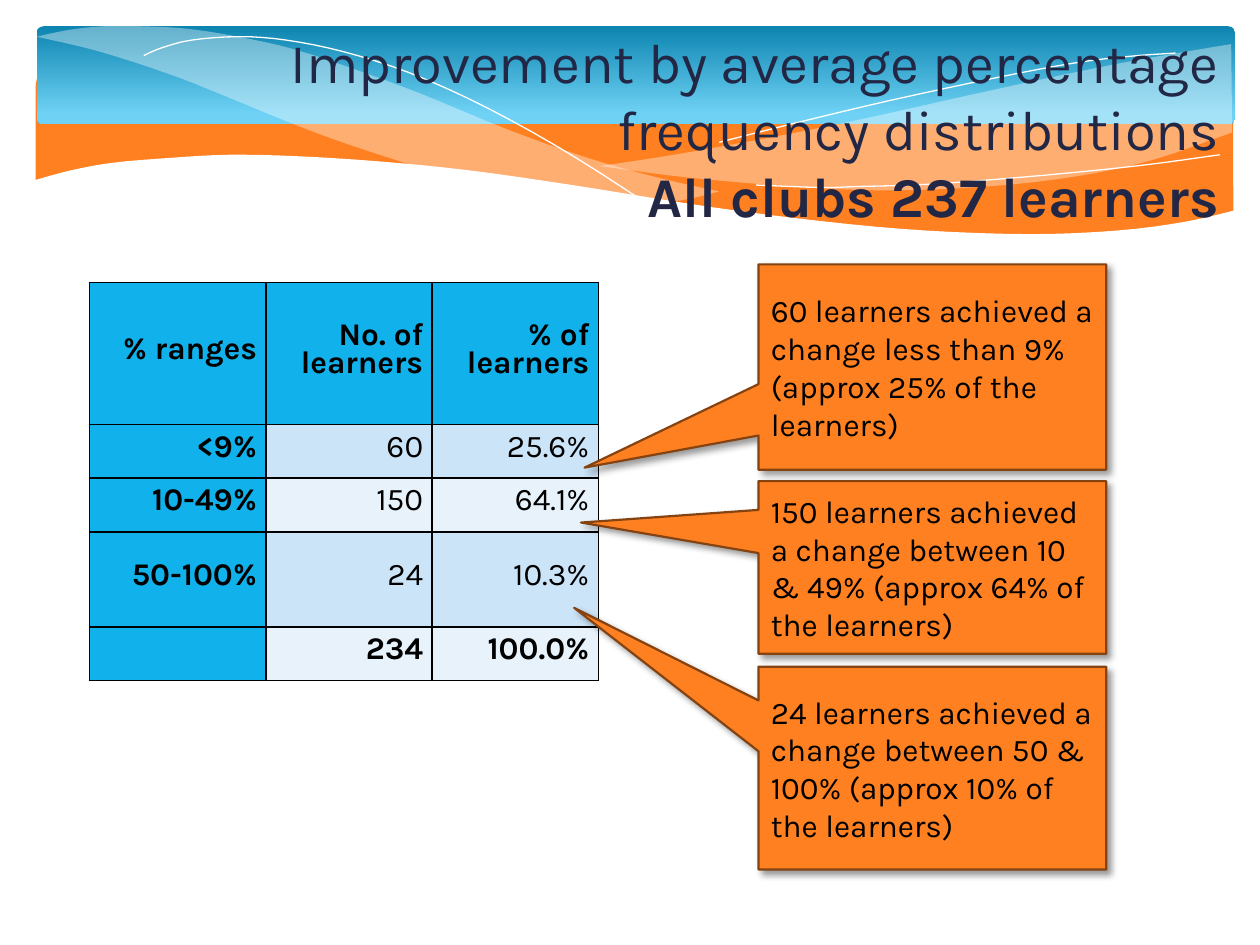
from dataclasses import dataclass

from lxml import etree
from pptx import Presentation
from pptx.dml.color import RGBColor
from pptx.enum.shapes import MSO_SHAPE
from pptx.enum.text import MSO_ANCHOR, PP_ALIGN
from pptx.oxml.ns import qn
from pptx.util import Cm, Pt

ROUND = MSO_SHAPE.ROUNDED_RECTANGLE
CALL = MSO_SHAPE.RECTANGULAR_CALLOUT
MID = MSO_ANCHOR.MIDDLE
LEFT, RIGHT = PP_ALIGN.LEFT, PP_ALIGN.RIGHT


@dataclass
class Theme:
    font: str = "Karla"
    big: int = 32
    body: int = 18
    ink: str = "212745"
    black: str = "000000"
    white: str = "FFFFFF"
    warm: str = "FF8021"
    edge: str = "854311"
    deep: str = "0D85B0"
    sky: str = "6FD2F5"
    head: str = "11B2EB"
    bands: tuple = ("CCE4F7", "E7F2FB")


T = Theme()

TITLE = ("Improvement by average percentage frequency distributions",
         "All clubs 237 learners")
ROWS = [
    ("% ranges", "No. of learners", "% of learners"),
    ("<9%", "60", "25.6%"),
    ("10-49%", "150", "64.1%"),
    ("50-100%", "24", "10.3%"),
    ("", "234", "100.0%"),
]
COLS = (3.56, 3.35, 3.35)
HIGHS = (2.87, 1.08, 1.08, 1.92, 1.08)
NOTES = [
    ("60 learners achieved a change less than 9% (approx 25% of the learners)",
     5.33, 4.14, (-1, 0.49)),
    ("150 learners achieved a change between 10 & 49% (approx 64% of the learners)",
     9.7, 3.48, (-1.01, -0.26)),
    ("24 learners achieved a change between 50 & 100% (approx 10% of the learners)",
     13.44, 4.09, (-1.03, -0.79)),
]

VEILS = [
    [[(24.82, 0.89), (22.61, 1.27), (20.17, 1.78), (16.87, 2.51), (13.89, 3.07),
      (12.09, 3.35)],
     [(12.09, 3.35), (13.87, 3.58), (15.98, 3.76), (17.86, 3.84), (19.91, 3.76),
      (21.67, 3.56), (23.22, 3.23), (24.84, 2.67)]],
    [[(14.5, 3.86), (13.26, 3.58), (11.84, 3.18), (10.26, 2.62), (8.51, 1.9),
      (7.16, 1.4), (5.92, 0.99), (4.8, 0.74), (3.78, 0.58), (2.87, 0.53),
      (2.06, 0.53), (1.35, 0.61), (0.74, 0.74)],
     [(0.74, 0.74), (2.01, 1.04), (3.43, 1.5), (4.45, 1.9), (6.27, 2.64),
      (7.9, 3.2), (9.35, 3.63), (10.64, 3.91), (11.79, 4.06), (12.8, 4.09),
      (13.72, 4.04), (14.5, 3.86)]],
]
WAVE = [
    [(25.1, 4.19), (23.9, 4.47), (22.5, 4.65), (20.78, 4.72), (18.69, 4.65),
     (16.66, 4.47), (14.3, 4.17), (11.53, 3.73), (9.42, 3.43), (7.59, 3.25),
     (5.99, 3.15), (4.62, 3.12), (3.48, 3.18), (2.29, 3.28), (1.45, 3.43),
     (0.71, 3.63)],
    [(0.71, 5.61), (25.1, 5.61)],
]
LINES = [
    [(2.9, 1.12), (3.25, 0.97), (3.86, 0.81), (4.83, 0.74), (5.77, 0.81),
     (6.91, 1.04), (8.26, 1.47), (9.83, 2.18), (11.61, 3.18), (13.64, 4.5)],
    [(14.5, 2.87), (16, 2.49), (17.93, 2.03), (20.17, 1.55), (21.67, 1.27),
     (22.73, 1.14), (23.7, 1.07)],
    [(24.59, 3.12), (23.04, 3.33), (21.08, 3.53), (18.8, 3.71), (17.27, 3.76),
     (16.54, 3.78), (15.24, 3.73)],
]


def rgb(code):
    return RGBColor.from_string(code)


def paint(part, code):
    part.fill.solid()
    part.fill.fore_color.rgb = rgb(code)


def style(runs, size, code, bold=False):
    for run in runs:
        run.font.name = T.font
        run.font.size = Pt(size)
        run.font.bold = bold
        run.font.color.rgb = rgb(code)


def smooth(dots, steps=4):
    ends = [dots[0], *dots, dots[-1]]
    out = [dots[0]]
    for a, b, c, d in zip(ends, ends[1:], ends[2:], ends[3:]):
        for k in range(1, steps + 1):
            t = k / steps
            out.append(tuple(
                (2 * q + (r - p) * t + (2 * p - 5 * q + 4 * r - s) * t ** 2
                 + (3 * q - p - 3 * r + s) * t ** 3) / 2
                for p, q, r, s in zip(a, b, c, d)))
    return out


def trace(shapes, curves, shut):
    dots = [(Cm(x), Cm(y)) for curve in curves for x, y in smooth(curve)]
    pen = shapes.build_freeform(*dots[0], scale=1.0)
    pen.add_line_segments(dots[1:], close=shut)
    shape = pen.convert_to_shape()
    shape.shadow.inherit = False
    if shut:
        paint(shape, T.white)
        shape.line.fill.background()
    else:
        shape.fill.background()
        shape.line.color.rgb = rgb(T.white)
        shape.line.width = Pt(0)
    return shape


def banner(shapes):
    base = shapes.add_shape(ROUND, Cm(0.74), Cm(1.12), Cm(24.1), Cm(3.96))
    base.shadow.inherit = False
    paint(base, T.warm)
    base.line.color.rgb = rgb(T.warm)
    base.line.width = Pt(1.25)
    top = shapes.add_shape(ROUND, Cm(0.74), Cm(0.53), Cm(24.16), Cm(1.98))
    top.shadow.inherit = False
    top.adjustments[0] = 0.07
    top.line.fill.background()
    top.fill.gradient()
    top.fill.gradient_angle = 270
    for stop, code, place in zip(top.fill.gradient_stops, (T.deep, T.sky), (0, 0.9)):
        stop.color.rgb = rgb(code)
        stop.position = place
    for curves in VEILS:
        veil = trace(shapes, curves, True)
        tint = veil._element.spPr.find(qn("a:solidFill"))[0]
        etree.SubElement(tint, qn("a:alpha"), val="37000")
    trace(shapes, WAVE, True)
    for curve in LINES:
        trace(shapes, [curve], False)


def title(shapes):
    frame = shapes.add_textbox(Cm(3.61), Cm(0.84), Cm(21.23), Cm(3.48)).text_frame
    frame.word_wrap = True
    frame.vertical_anchor = MID
    frame.text = "\v".join(TITLE)
    para = frame.paragraphs[0]
    para.alignment = RIGHT
    style(para.runs, T.big, T.ink)
    para.runs[-1].font.bold = True


def border(cell):
    props = cell._tc.get_or_add_tcPr()
    for spot, side in enumerate(("lnL", "lnR", "lnT", "lnB")):
        line = etree.Element(qn("a:" + side), w=str(Pt(1)))
        fill = etree.SubElement(line, qn("a:solidFill"))
        etree.SubElement(fill, qn("a:srgbClr"), val=T.black)
        props.insert(spot, line)


def grid(shapes):
    table = shapes.add_table(len(ROWS), len(COLS), Cm(1.8), Cm(5.69),
                             Cm(sum(COLS)), Cm(sum(HIGHS))).table
    for col, wide in zip(table.columns, COLS):
        col.width = Cm(wide)
    for r, (row, high) in enumerate(zip(ROWS, HIGHS)):
        table.rows[r].height = Cm(high)
        for c, text in enumerate(row):
            cell = table.cell(r, c)
            main = r == 0 or c == 0
            paint(cell, T.head if main else T.bands[(r - 1) % 2])
            border(cell)
            cell.margin_left = cell.margin_right = Cm(0.18)
            cell.margin_top = cell.margin_bottom = 0
            cell.vertical_anchor = MID
            para = cell.text_frame.paragraphs[0]
            para.text = text
            para.alignment = RIGHT
            para.line_spacing = Pt(16)
            para.space_after = Pt(6)
            style(para.runs, T.body, T.black, main or r == len(ROWS) - 1)


def shade(shape):
    shape.shadow.inherit = False
    box = shape._element.spPr.find(qn("a:effectLst"))
    cast = etree.SubElement(box, qn("a:outerShdw"), blurRad=str(Pt(4)),
                            dist=str(Pt(3)), dir="2700000", rotWithShape="0")
    tint = etree.SubElement(cast, qn("a:srgbClr"), val=T.black)
    etree.SubElement(tint, qn("a:alpha"), val="40000")


def notes(shapes):
    for text, top, high, tip in NOTES:
        note = shapes.add_shape(CALL, Cm(15.29), Cm(top), Cm(7.01), Cm(high))
        note.adjustments[0], note.adjustments[1] = tip
        paint(note, T.warm)
        note.line.color.rgb = rgb(T.edge)
        note.line.width = Pt(1.25)
        shade(note)
        frame = note.text_frame
        frame.word_wrap = True
        frame.vertical_anchor = MID
        frame.text = text
        frame.paragraphs[0].alignment = LEFT
        style(frame.paragraphs[0].runs, T.body, T.black)


def main():
    deck = Presentation()
    deck.slide_width, deck.slide_height = Cm(25.4), Cm(19.05)
    shapes = deck.slides.add_slide(deck.slide_layouts[6]).shapes
    for draw in (banner, title, grid, notes):
        draw(shapes)
    deck.save("out.pptx")


if __name__ == "__main__":
    main()
